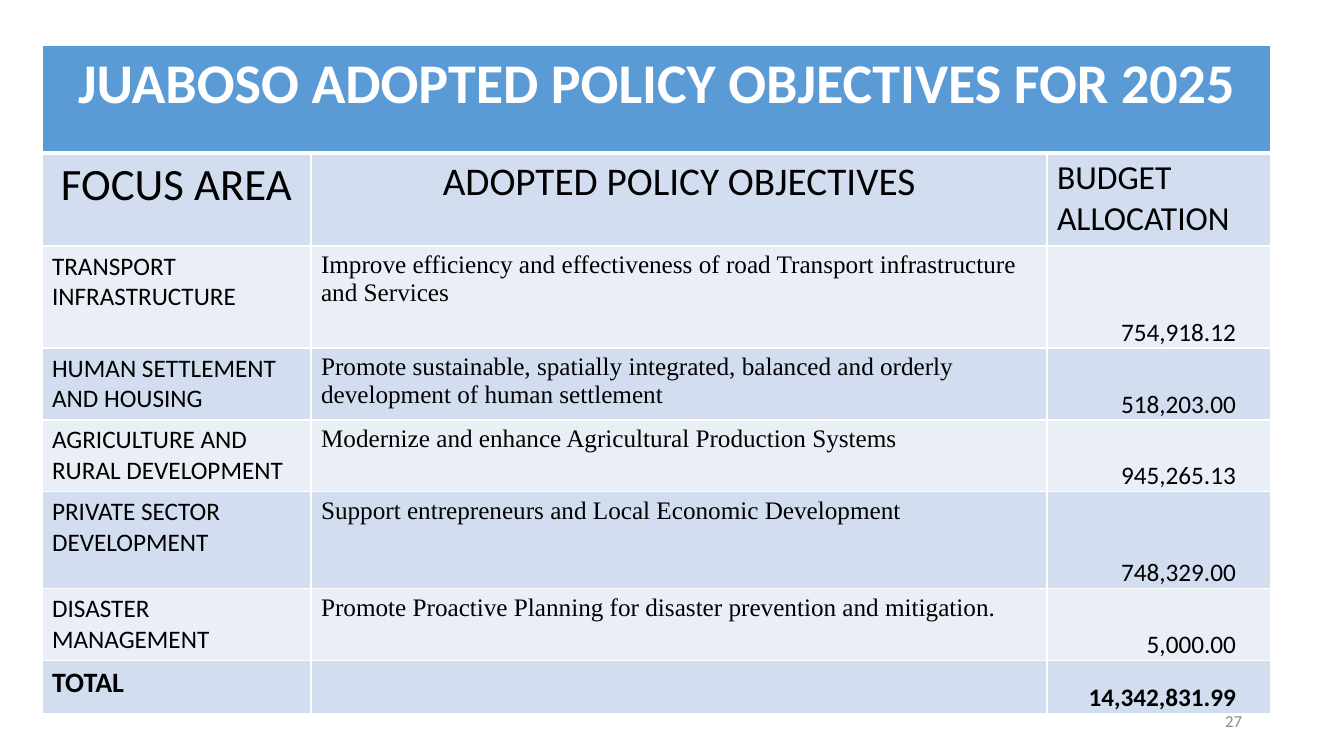
"""Build the slide with the 2025 policy objectives and budget table."""
from lxml import etree
from pptx import Presentation
from pptx.dml.color import RGBColor
from pptx.enum.text import MSO_ANCHOR as Anchor, PP_ALIGN as Align
from pptx.oxml.ns import qn
from pptx.util import Pt

TITLE = "JUABOSO ADOPTED POLICY OBJECTIVES FOR 2025"
HEADINGS = ("FOCUS AREA", "ADOPTED POLICY OBJECTIVES", "BUDGET ALLOCATION")
BUDGET = [
    ("TRANSPORT INFRASTRUCTURE",
     "Improve efficiency and effectiveness of road Transport infrastructure and Services",
     "754,918.12"),
    ("HUMAN SETTLEMENT AND HOUSING",
     "Promote sustainable, spatially integrated, balanced and orderly development of human settlement",
     "518,203.00"),
    ("AGRICULTURE AND RURAL DEVELOPMENT",
     "Modernize and enhance Agricultural Production Systems", "945,265.13"),
    ("PRIVATE SECTOR DEVELOPMENT",
     "Support entrepreneurs and Local Economic Development", "748,329.00"),
    ("DISASTER MANAGEMENT",
     "Promote Proactive Planning for disaster prevention and mitigation.", "5,000.00"),
]
TOTAL = ("TOTAL", "", "14,342,831.99")
PAGE_NUMBER = "27"

COLORS = {"title": "5B9BD5", "dark": "D2DEEF", "light": "EAEFF7",
          "white": "FFFFFF", "black": "000000", "gray": "8C8C8C"}
SLIDE_SIZE = (1344, 756)
TABLE_ORIGIN = (42, 45)
COLUMN_WIDTHS = (269, 736, 224)
ROW_HEIGHTS = (108, 93, 102, 72, 71, 97, 72, 53)
PAGE_BOX = (950, 701, 302, 40)
AMOUNT_MARGINS = {"margin_left": 1, "margin_top": 1, "margin_right": 35, "margin_bottom": 0}

TITLE_FORMAT = {"size": 40, "bold": True, "color": "white", "align": Align.CENTER}
HEADING_FORMATS = ({"size": 32, "align": Align.CENTER},
                   {"size": 28, "align": Align.CENTER}, {"size": 24})
BODY_FORMATS = ({}, {"name": "Times New Roman"}, {"align": Align.RIGHT})
TOTAL_FORMATS = ({"size": 20, "bold": True}, {}, {"bold": True, "align": Align.RIGHT})


def px(length):
    return round(length * 914400 / 100.8)


def write(text_frame, text, size=18, color="black", align=Align.LEFT, name="Calibri", bold=False):
    paragraph = text_frame.paragraphs[0]
    paragraph.alignment = align
    run = paragraph.add_run()
    run.text = text
    for attribute, value in {"size": Pt(size), "name": name, "bold": bold}.items():
        setattr(run.font, attribute, value)
    run.font.color.rgb = RGBColor.from_string(COLORS[color])


def add_borders(cell, widths):
    properties = cell._tc.get_or_add_tcPr()
    for position, (side, width) in enumerate(zip("LRTB", widths)):
        line = etree.Element(qn(f"a:ln{side}"), w=str(Pt(width)))
        fill = etree.SubElement(line, qn("a:solidFill"))
        etree.SubElement(fill, qn("a:srgbClr"), val=COLORS["white"])
        properties.insert(position, line)


def add_budget_table(slide):
    rows = [(TITLE, "", ""), HEADINGS, *BUDGET, TOTAL]
    formats = [(TITLE_FORMAT, {}, {}), HEADING_FORMATS,
               *[BODY_FORMATS] * len(BUDGET), TOTAL_FORMATS]
    size = (sum(COLUMN_WIDTHS), sum(ROW_HEIGHTS))
    table = slide.shapes.add_table(len(rows), len(COLUMN_WIDTHS),
                                   *map(px, TABLE_ORIGIN + size)).table
    for column, width in zip(table.columns, COLUMN_WIDTHS):
        column.width = px(width)
    for row, height in zip(table.rows, ROW_HEIGHTS):
        row.height = px(height)
    table.cell(0, 0).merge(table.cell(0, len(COLUMN_WIDTHS) - 1))

    for row_index, (texts, row_formats) in enumerate(zip(rows, formats)):
        shade = "title" if row_index == 0 else "dark" if row_index % 2 else "light"
        for column_index, (text, text_format) in enumerate(zip(texts, row_formats)):
            cell = table.cell(row_index, column_index)
            cell.fill.solid()
            cell.fill.fore_color.rgb = RGBColor.from_string(COLORS[shade])
            add_borders(cell, (1, 1, 3 if row_index == 1 else 1, 3 if row_index == 0 else 1))
            if text:
                write(cell.text_frame, text, **text_format)
            if row_index > 1 and column_index == 2:
                cell.vertical_anchor = Anchor.BOTTOM
                for margin, length in AMOUNT_MARGINS.items():
                    setattr(cell, margin, px(length))


def add_page_number(slide):
    text_frame = slide.shapes.add_textbox(*map(px, PAGE_BOX)).text_frame
    text_frame.word_wrap = True
    text_frame.vertical_anchor = Anchor.MIDDLE
    write(text_frame, PAGE_NUMBER, size=12, color="gray", align=Align.RIGHT)


def main():
    presentation = Presentation()
    presentation.slide_width, presentation.slide_height = map(px, SLIDE_SIZE)
    slide = presentation.slides.add_slide(presentation.slide_layouts[6])
    add_budget_table(slide)
    add_page_number(slide)
    presentation.save("out.pptx")


if __name__ == "__main__":
    main()
